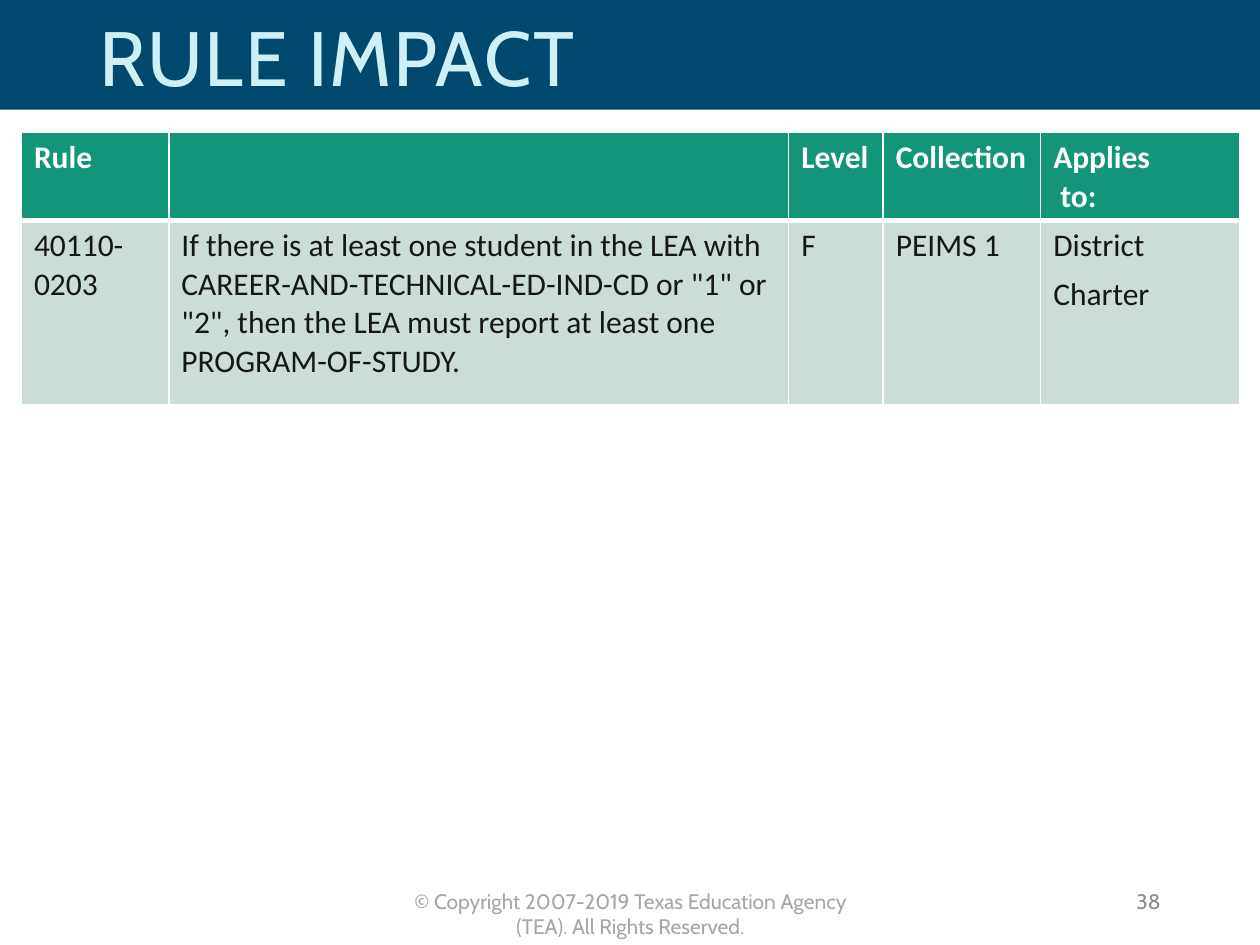
from lxml import etree
from pptx import Presentation
from pptx.dml.color import RGBColor
from pptx.enum.shapes import MSO_SHAPE
from pptx.enum.text import MSO_ANCHOR, PP_ALIGN
from pptx.oxml.ns import qn
from pptx.util import Inches, Pt

RECTANGLE = MSO_SHAPE.RECTANGLE
TOP, MIDDLE = MSO_ANCHOR.TOP, MSO_ANCHOR.MIDDLE
LEFT, CENTER, RIGHT = PP_ALIGN.LEFT, PP_ALIGN.CENTER, PP_ALIGN.RIGHT

THEME = {
    "band": "00486E", "title": "CCF0F5", "footer": "A6A6A6", "number": "8C8C8C",
    "header_fill": "129579", "header_text": "FFFFFF",
    "body_fill": "CCDDD7", "body_text": "171616", "border": "FFFFFF",
    "heading_font": "Cabin", "table_font": "Calibri",
    "title_size": 44, "table_size": 18, "footer_size": 12,
}

presentation = Presentation()
presentation.slide_width, presentation.slide_height = Inches(10), Inches(7.5)
slide = presentation.slides.add_slide(presentation.slide_layouts[6])
BAND_HEIGHT = 0.87


def add_label(text, box, size, color, alignment, anchor):
    """Add a one-paragraph text box in the heading font."""
    shape = slide.shapes.add_textbox(*(Inches(length) for length in box))
    frame = shape.text_frame
    frame.word_wrap = True
    frame.vertical_anchor = anchor
    frame.text = text
    paragraph = frame.paragraphs[0]
    paragraph.alignment = alignment
    font = paragraph.runs[0].font
    font.name, font.size = THEME["heading_font"], Pt(THEME[size])
    font.color.rgb = RGBColor.from_string(THEME[color])
    return paragraph


def add_borders(cell, widths):
    """Draw the cell's left, right, top and bottom borders, widths in points."""
    properties = cell._tc.get_or_add_tcPr()
    for index, (side, width) in enumerate(zip(("lnL", "lnR", "lnT", "lnB"), widths)):
        line = etree.Element(qn(f"a:{side}"), w=str(Pt(width)))
        fill = etree.SubElement(line, qn("a:solidFill"))
        etree.SubElement(fill, qn("a:srgbClr"), val=THEME["border"])
        properties.insert(index, line)


# Title band
band = slide.shapes.add_shape(RECTANGLE, 0, 0, presentation.slide_width, Inches(BAND_HEIGHT))
band.shadow.inherit = False
band.fill.solid()
band.fill.fore_color.rgb = RGBColor.from_string(THEME["band"])
band.line.fill.background()

# Title, with slightly open letter spacing
title = add_label("RULE IMPACT", (0.69, 0.05, 8, BAND_HEIGHT), "title_size", "title", LEFT, MIDDLE)
title.line_spacing = 0.9
title.runs[0].font._element.set("spc", "100")

# Rule table: one header row and one body row
rows = [
    ["Rule", "", "Level", "Collection", "Applies\n to:"],
    [
        "40110-0203",
        "If there is at least one student in the LEA with CAREER-AND-TECHNICAL-ED-IND-CD "
        'or "1" or "2", then the LEA must report at least one PROGRAM-OF-STUDY.',
        "F",
        "PEIMS 1",
        "District\nCharter",
    ],
]
column_widths = [1.17, 4.92, 0.75, 1.25, 1.58]
row_heights = [0.7, 1.46]
table = slide.shapes.add_table(
    len(rows), len(column_widths), Inches(0.17), Inches(1.05),
    Inches(sum(column_widths)), Inches(sum(row_heights)),
).table
table.horz_banding = False
for column, width in zip(table.columns, column_widths):
    column.width = Inches(width)
for row, height in zip(table.rows, row_heights):
    row.height = Inches(height)

for row_index, texts in enumerate(rows):
    is_header = row_index == 0
    part = "header" if is_header else "body"
    for column_index, text in enumerate(texts):
        cell = table.cell(row_index, column_index)
        cell.fill.solid()
        cell.fill.fore_color.rgb = RGBColor.from_string(THEME[f"{part}_fill"])
        add_borders(cell, (1, 1, 1, 3) if is_header else (1, 1, 3, 1))
        cell.text_frame.text = text
        for paragraph in cell.text_frame.paragraphs:
            paragraph.space_after = Pt(0 if is_header else 6)
            font = paragraph.font
            font.size = Pt(THEME["table_size"])
            for run in paragraph.runs:
                run.font.name, run.font.size = THEME["table_font"], Pt(THEME["table_size"])
                run.font.bold = is_header
                run.font.color.rgb = RGBColor.from_string(THEME[f"{part}_text"])

# Footer and slide number
add_label("© Copyright 2007-2019 Texas Education Agency (TEA). All Rights Reserved.",
          (3.04, 7, 3.93, 0.3), "footer_size", "footer", CENTER, TOP)
add_label("38", (7.06, 6.95, 2.25, 0.4), "footer_size", "number", RIGHT, MIDDLE)

presentation.save("out.pptx")
